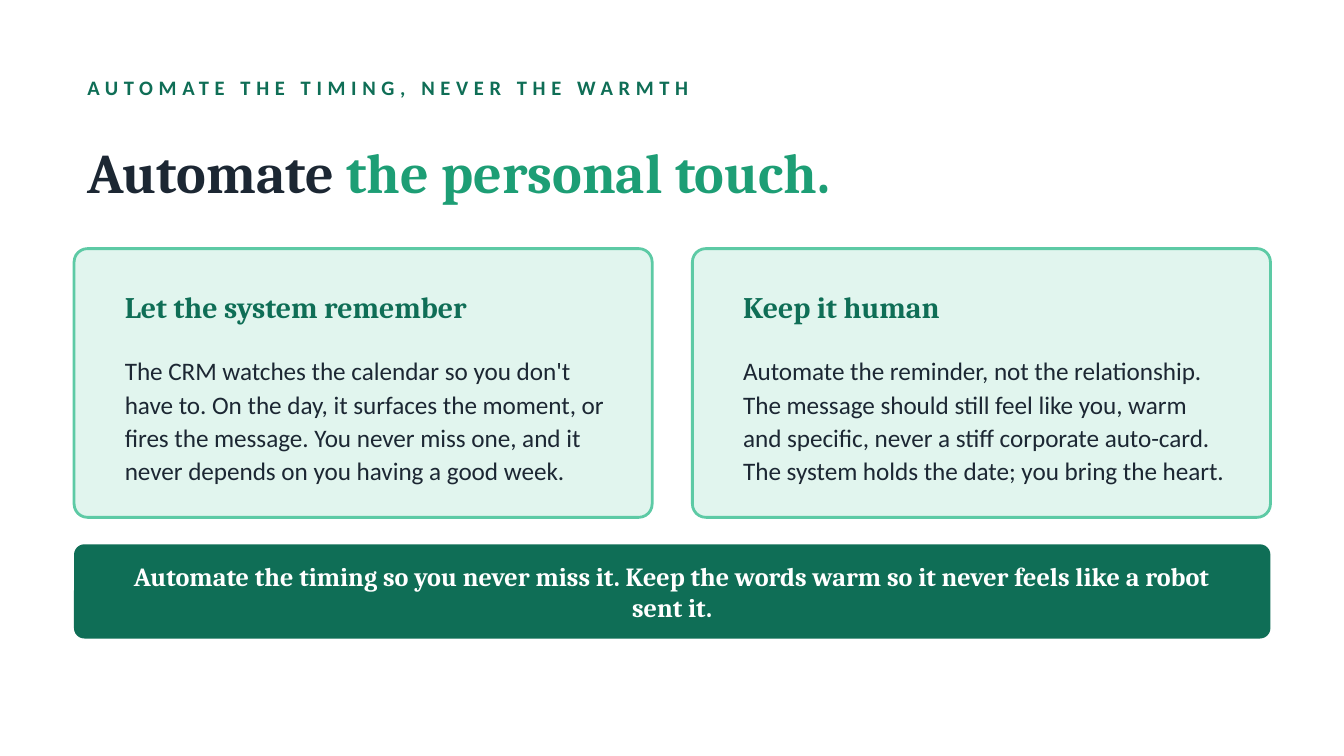
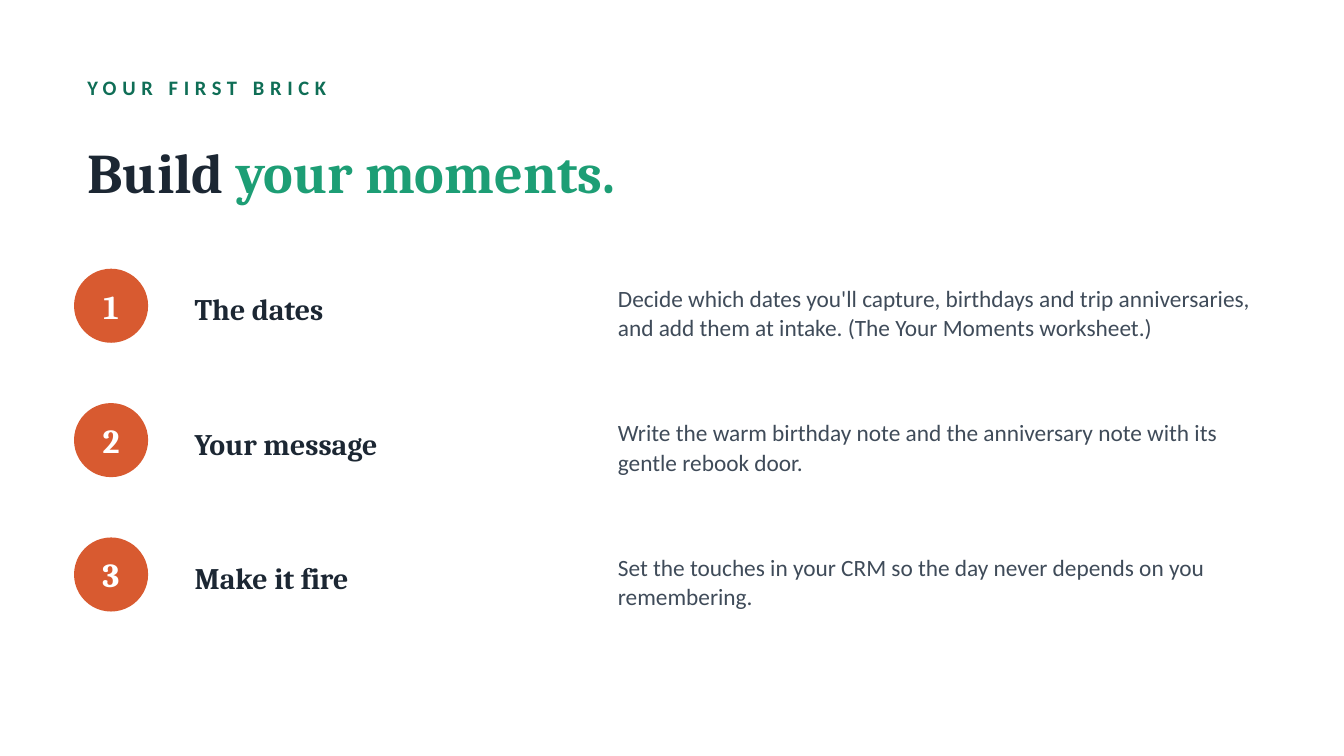
from dataclasses import dataclass

from pptx import Presentation
from pptx import util as u
from pptx.dml.color import RGBColor
from pptx.enum import shapes, text

GREEN, ACCENT, MINT, MINT_EDGE = "0F6E56", "1D9E75", "E1F5EE", "5DCAA5"
INK, SLATE, ORANGE, WHITE = "1C2733", "3F4B59", "D85A30", "FFFFFF"
SERIF, SANS = "Cambria", "Calibri"

# Lengths are centimetres.
LEFT, WIDTH = 1.4, 22.61
TITLE_ONLY = 5


@dataclass(frozen=True)
class Box:
    left: float
    top: float
    width: float
    height: float

    def emu(self) -> list:
        return [u.Cm(v) for v in (self.left, self.top, self.width, self.height)]


@dataclass(frozen=True)
class Style:
    font: str
    size: float
    color: str
    bold: bool = False
    spacing: float = 0
    line: float = 1
    centred: bool = False


@dataclass(frozen=True)
class Card:
    heading: str
    body: str


@dataclass(frozen=True)
class Step:
    name: str
    detail: str


KICKER = Style(SANS, 11, GREEN, bold=True, spacing=3)
TITLE = Style(SERIF, 30, INK, bold=True)
TITLE_ACCENT = Style(SERIF, 30, ACCENT, bold=True)
CARD_HEADING = Style(SERIF, 16, GREEN, bold=True)
CARD_BODY = Style(SANS, 13.5, INK, line=1.1)
BANNER = Style(SERIF, 14, WHITE, bold=True, centred=True)
NUMBER = Style(SERIF, 18, WHITE, bold=True, centred=True)
STEP_NAME = Style(SERIF, 16, INK, bold=True)
STEP_DETAIL = Style(SANS, 12.5, SLATE, line=1.05)

CARDS = [
    Card("Let the system remember",
         "The CRM watches the calendar so you don't have to. On the day, it surfaces "
         "the moment, or fires the message. You never miss one, and it never depends "
         "on you having a good week."),
    Card("Keep it human",
         "Automate the reminder, not the relationship. The message should still feel "
         "like you, warm and specific, never a stiff corporate auto-card. The system "
         "holds the date; you bring the heart."),
]

STEPS = [
    Step("The dates",
         "Decide which dates you'll capture, birthdays and trip anniversaries, and add "
         "them at intake. (The Your Moments worksheet.)"),
    Step("Your message",
         "Write the warm birthday note and the anniversary note with its gentle "
         "rebook door."),
    Step("Make it fire",
         "Set the touches in your CRM so the day never depends on you remembering."),
]


def rgb(color: str) -> RGBColor:
    return RGBColor.from_string(color)


def write(sp, *runs: tuple[str, Style]) -> None:
    """Fill a shape with one paragraph; the first run's style sets its layout."""
    tf = sp.text_frame
    tf.word_wrap = True
    tf.auto_size = text.MSO_AUTO_SIZE.NONE
    tf.vertical_anchor = text.MSO_ANCHOR.MIDDLE
    p = tf.paragraphs[0]
    first = runs[0][1]
    p.alignment = text.PP_ALIGN.CENTER if first.centred else text.PP_ALIGN.LEFT
    p.line_spacing = first.line
    for words, style in runs:
        r = p.add_run()
        r.text = words
        r.font.name = style.font
        r.font.size = u.Pt(style.size)
        r.font.bold = style.bold
        r.font.color.rgb = rgb(style.color)
        if style.spacing:
            r._r.get_or_add_rPr().set("spc", str(int(style.spacing * 100)))


def add_text(slide, box: Box, words: str, style: Style) -> None:
    write(slide.shapes.add_textbox(*box.emu()), (words, style))


def add_panel(slide, kind, box: Box, fill: str, edge: str = "", corner: float = 0):
    sp = slide.shapes.add_shape(kind, *box.emu())
    sp.shadow.inherit = False
    sp.fill.solid()
    sp.fill.fore_color.rgb = rgb(fill)
    if edge:
        sp.line.color.rgb = rgb(edge)
        sp.line.width = u.Pt(1.5)
    else:
        sp.line.fill.background()
    if corner:
        sp.adjustments[0] = corner
    return sp


def set_side_margins(sp, margin: float) -> None:
    sp.text_frame.margin_left = sp.text_frame.margin_right = u.Cm(margin)


def add_slide(prs, kicker: str, lead: str, accent: str):
    slide = prs.slides.add_slide(prs.slide_layouts[TITLE_ONLY])
    title = slide.shapes.title
    title.left, title.top, title.width, title.height = Box(LEFT, 2.16, WIDTH, 2.16).emu()
    write(title, (lead, TITLE), (accent, TITLE_ACCENT))
    add_text(slide, Box(LEFT, 1.27, WIDTH, 0.76), kicker, KICKER)
    return slide


def add_card(slide, left: float, width: float, card: Card) -> None:
    add_panel(slide, shapes.MSO_SHAPE.ROUNDED_RECTANGLE, Box(left, 4.7, width, 5.08),
              MINT, MINT_EDGE, corner=0.05)
    inner = left + 0.71
    add_text(slide, Box(inner, 5.16, 9.65, 1.27), card.heading, CARD_HEADING)
    add_text(slide, Box(inner, 6.53, 9.65, 2.79), card.body, CARD_BODY)


def add_step(slide, number: int, top: float, step: Step) -> None:
    disc = add_panel(slide, shapes.MSO_SHAPE.OVAL, Box(LEFT, top, 1.4, 1.4), ORANGE)
    set_side_margins(disc, 0)
    write(disc, (str(number), NUMBER))
    add_text(slide, Box(3.43, top - 0.13, 7.62, 1.78), step.name, STEP_NAME)
    add_text(slide, Box(11.43, top - 0.13, 12.7, 1.9), step.detail, STEP_DETAIL)


def build_personal_touch(prs) -> None:
    slide = add_slide(prs, "AUTOMATE THE TIMING, NEVER THE WARMTH",
                      "Automate ", "the personal touch.")
    gap = 0.76
    width = (WIDTH - gap) / len(CARDS)
    for i, card in enumerate(CARDS):
        add_card(slide, LEFT + i * (width + gap), width, card)
    banner = add_panel(slide, shapes.MSO_SHAPE.ROUNDED_RECTANGLE,
                       Box(LEFT, 10.29, WIDTH, 1.78), GREEN, corner=0.11)
    set_side_margins(banner, 0.85)
    write(banner, ("Automate the timing so you never miss it. Keep the words warm so it "
                   "never feels like a robot sent it.", BANNER))


def build_moments(prs) -> None:
    slide = add_slide(prs, "YOUR FIRST BRICK", "Build ", "your moments.")
    for i, step in enumerate(STEPS):
        add_step(slide, i + 1, 5.08 + i * 2.54, step)


def main() -> None:
    prs = Presentation()
    prs.slide_width, prs.slide_height = u.Cm(25.4), u.Cm(14.29)
    build_personal_touch(prs)
    build_moments(prs)
    prs.save("out.pptx")


if __name__ == "__main__":
    main()
